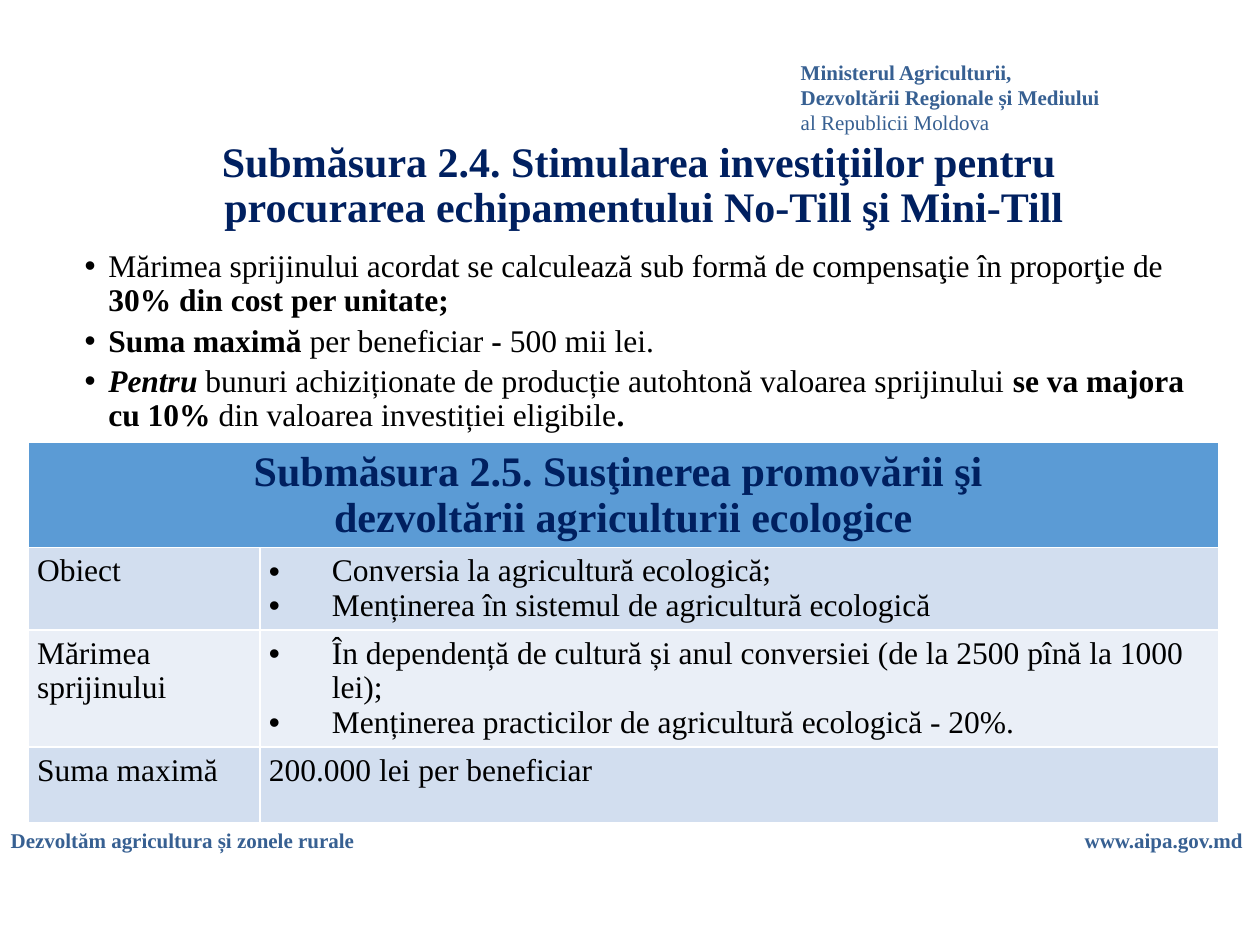
from lxml import etree
from pptx import Presentation
from pptx.dml.color import RGBColor
from pptx.enum.text import MSO_ANCHOR, PP_ALIGN
from pptx.oxml.ns import qn
from pptx.util import Pt

LEFT, CENTER = PP_ALIGN.LEFT, PP_ALIGN.CENTER
TOP, MIDDLE = MSO_ANCHOR.TOP, MSO_ANCHOR.MIDDLE
FONT = "Times New Roman"
COLORS = {
    "brand": "376092",
    "title": "002060",
    "text": "000000",
    "header": "5B9BD5",
    "band_dark": "D2DEEF",
    "band_light": "EAEFF7",
}


def color(name):
    return RGBColor.from_string(COLORS[name])


def write_text(frame, paragraphs, size=18, ink="text", bold=False, align=LEFT,
               spacing=1.0, gap=0, bullet=None):
    """Fill a frame; a paragraph is a string or a list of (text, style) runs.

    A style holds "b" for bold and "i" for italic; bullet is (margin, hanging).
    """
    for index, runs in enumerate(paragraphs):
        paragraph = frame.paragraphs[0] if index == 0 else frame.add_paragraph()
        if bullet:
            add_bullet(paragraph, *bullet)
        paragraph.alignment = align
        paragraph.line_spacing = spacing
        paragraph.space_before = Pt(gap if index else 0)
        if isinstance(runs, str):
            runs = [(runs, "b" if bold else "")]
        for text, style in runs:
            for number, line in enumerate(text.split("\n")):
                if number:
                    paragraph.add_line_break()
                run = paragraph.add_run()
                run.text = line
                font = run.font
                font.name, font.size = FONT, Pt(size)
                font.bold, font.italic = "b" in style, "i" in style
                font.color.rgb = color(ink)


def add_bullet(paragraph, margin, hanging):
    properties = paragraph._p.get_or_add_pPr()
    properties.set("marL", str(Pt(margin)))
    properties.set("indent", str(-Pt(hanging)))
    etree.SubElement(properties, qn("a:buFont")).set("typeface", "Arial")
    etree.SubElement(properties, qn("a:buChar")).set("char", "•")


class SlideBuilder:
    def __init__(self, slide):
        self.slide = slide

    def text_box(self, left, top, width, height, paragraphs, wrap=True,
                 anchor=TOP, **style):
        box = self.slide.shapes.add_textbox(Pt(left), Pt(top), Pt(width), Pt(height))
        frame = box.text_frame
        frame.word_wrap = wrap
        frame.vertical_anchor = anchor
        write_text(frame, paragraphs, **style)

    def measure_table(self, left, top, widths, heights, title, rows):
        table = self.slide.shapes.add_table(
            len(heights), len(widths), Pt(left), Pt(top),
            Pt(sum(widths)), Pt(sum(heights))).table
        for column, width in zip(table.columns, widths):
            column.width = Pt(width)
        for row, height in zip(table.rows, heights):
            row.height = Pt(height)
        table.cell(0, 0).merge(table.cell(0, len(widths) - 1))
        self.fill_cell(table.cell(0, 0), "header", [title], size=24,
                       ink="title", bold=True, align=CENTER)
        for number, (label, details, bullet) in enumerate(rows, start=1):
            band = "band_dark" if number % 2 else "band_light"
            self.fill_cell(table.cell(number, 0), band, [label])
            self.fill_cell(table.cell(number, 1), band, details, bullet=bullet)

    def fill_cell(self, cell, fill, paragraphs, size=18, **style):
        """Set a cell with a fixed line height, so that rows keep their height."""
        cell.margin_left = cell.margin_right = Pt(5.2)
        cell.margin_top = cell.margin_bottom = Pt(3.6)
        cell.fill.solid()
        cell.fill.fore_color.rgb = color(fill)
        write_text(cell.text_frame, paragraphs, size=size,
                   spacing=Pt(1.1 * size), **style)


def main():
    presentation = Presentation()
    presentation.slide_width, presentation.slide_height = Pt(720), Pt(540)
    builder = SlideBuilder(presentation.slides.add_slide(presentation.slide_layouts[6]))

    brand = {"size": 12, "ink": "brand", "bold": True}
    builder.text_box(612, 469.5, 106, 21.6, ["www.aipa.gov.md"],
                     wrap=False, align=CENTER, **brand)
    builder.text_box(-1, 469.5, 433, 21.6,
                     ["Dezvoltăm agricultura și zonele rurale"], **brand)
    builder.text_box(450.5, 30.5, 194, 51, [
        "Ministerul Agriculturii, Dezvoltării Regionale și Mediului",
        [("al Republicii Moldova", "")],
    ], **brand)

    builder.text_box(26, 84, 684, 45, [
        "Submăsura 2.4. Stimularea investiţiilor pentru \n"
        "procurarea echipamentului No-Till şi Mini-Till",
    ], anchor=MIDDLE, size=24, ink="title", bold=True, align=CENTER, spacing=0.9)

    builder.text_box(14.5, 139.5, 680.5, 126, [
        [("Mărimea sprijinului acordat se calculează sub formă de compensaţie "
          "în proporţie de ", ""), ("30% din cost per unitate;", "b")],
        [("Suma maximă ", "b"), ("per beneficiar ", ""), ("- ", "b"),
         ("500 mii lei.", "")],
        [("Pentru ", "bi"),
         ("bunuri achiziționate de producție autohtonă valoarea sprijinului", ""),
         (" se va majora cu 10% ", "b"),
         ("din valoarea investiției eligibile", ""), (".", "b")],
    ], spacing=0.9, gap=3.8, bullet=(40.3, 13.5))

    hanging = (36, 36)
    builder.measure_table(
        16, 253, [132.5, 548], [60, 47, 67, 43],
        "Submăsura 2.5. Susţinerea promovării şi \ndezvoltării agriculturii ecologice",
        [
            ("Obiect", ["Conversia la agricultură ecologică;",
                        "Menținerea în sistemul de agricultură ecologică"], hanging),
            ("Mărimea sprijinului", [
                "În dependență de cultură și anul conversiei "
                "(de la 2500 pînă la 1000 lei);",
                "Menținerea practicilor de agricultură ecologică - 20%."], hanging),
            ("Suma maximă", ["200.000 lei per beneficiar"], None),
        ])
    presentation.save("out.pptx")


if __name__ == "__main__":
    main()
